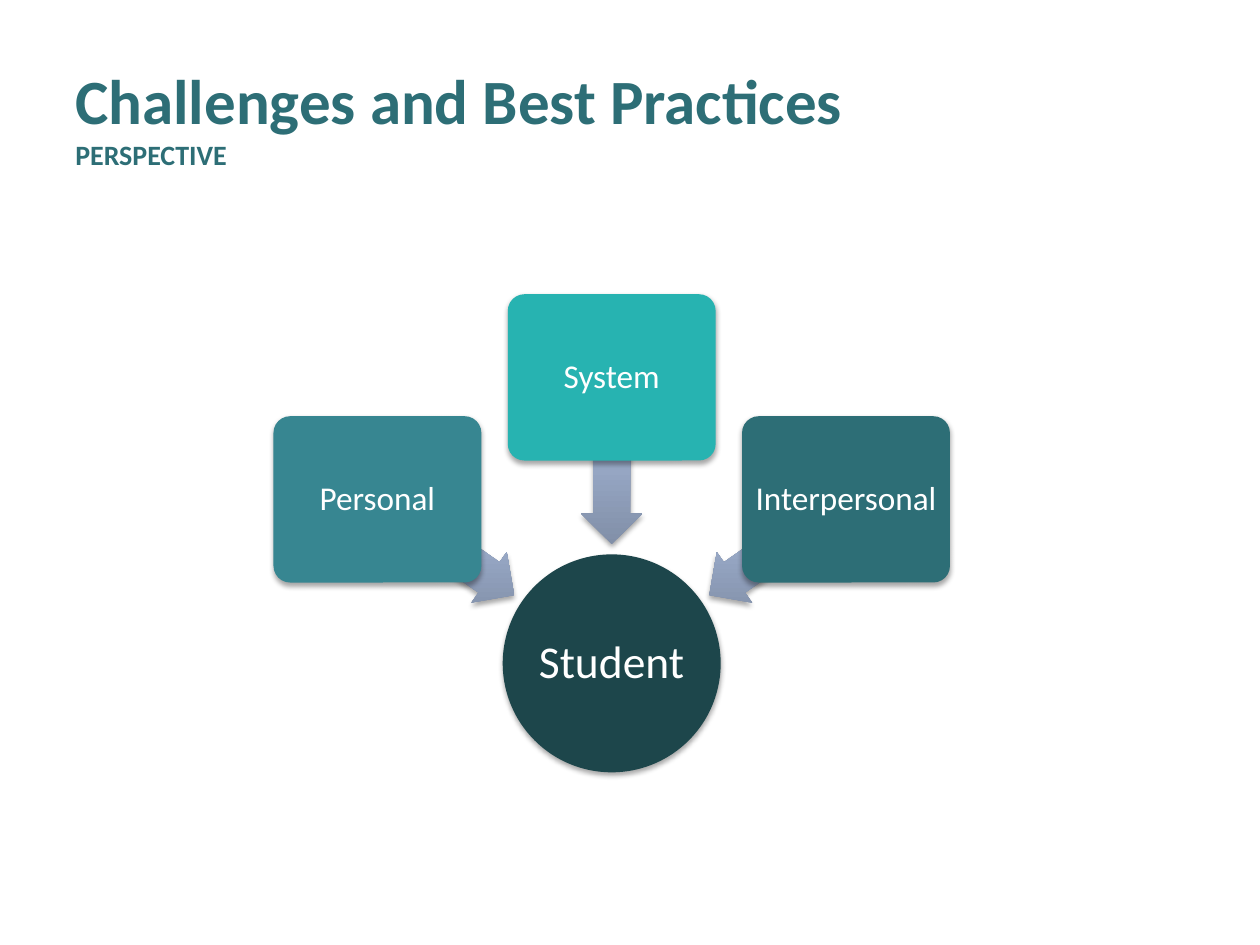
import math

import pptx
import pptx.util
import pptx.dml.color
import pptx.enum.shapes
import pptx.enum.text
import pptx.oxml
import pptx.oxml.ns

Inches = pptx.util.Inches
Pt = pptx.util.Pt
RGBColor = pptx.dml.color.RGBColor
MSO_SHAPE = pptx.enum.shapes.MSO_SHAPE
MSO_ANCHOR = pptx.enum.text.MSO_ANCHOR
qn = pptx.oxml.ns.qn

WHITE = RGBColor(0xFF, 0xFF, 0xFF)
DEEP_TEAL = RGBColor(0x1D, 0x46, 0x4B)
DARK_TEAL = RGBColor(0x2D, 0x6E, 0x76)
MID_TEAL = RGBColor(0x37, 0x86, 0x91)
BRIGHT_TEAL = RGBColor(0x27, 0xB3, 0xB1)
ARROW_DARK = RGBColor(0x81, 0x8F, 0xA8)
ARROW_LIGHT = RGBColor(0xA7, 0xB9, 0xDA)

FONT = "Calibri"
SHADOW = (
    f'<a:outerShdw {pptx.oxml.ns.nsdecls("a")} blurRad="{Pt(3.1)}" dist="{Pt(1.8)}" '
    'dir="5400000" rotWithShape="0"><a:srgbClr val="000000">'
    '<a:alpha val="35000"/></a:srgbClr></a:outerShdw>'
)

# Label, colour and direction from the hub (degrees, clockwise from right)
FACTORS = [
    ("Personal", MID_TEAL, 215),
    ("System", BRIGHT_TEAL, 270),
    ("Interpersonal", DARK_TEAL, 325),
]


def add_shape(s, kind, cx, cy, w, h):
    """Add a borderless shape with a soft shadow, centred on (cx, cy)."""
    sp = s.shapes.add_shape(kind, Inches(cx - w / 2), Inches(cy - h / 2), Inches(w), Inches(h))
    sp.line.fill.background()
    sp.shadow.inherit = False
    effects = sp._element.spPr.find(qn("a:effectLst"))
    effects.append(pptx.oxml.parse_xml(SHADOW))
    return sp


def add_label(sp, text, size, color, inset):
    sp.fill.solid()
    sp.fill.fore_color.rgb = color
    tf = sp.text_frame
    tf.word_wrap = True
    tf.vertical_anchor = MSO_ANCHOR.MIDDLE
    tf.margin_left = tf.margin_right = tf.margin_top = tf.margin_bottom = Inches(inset)
    p = tf.paragraphs[0]
    p.text = text
    p.alignment = pptx.enum.text.PP_ALIGN.CENTER
    p.line_spacing = 0.9
    p.font.name = FONT
    p.font.size = Pt(size)
    p.font.color.rgb = WHITE


def add_arrow(s, cx, cy, angle):
    sp = add_shape(s, MSO_SHAPE.LEFT_ARROW, cx, cy, 1.33, 0.49)
    sp.adjustments[0] = 0.6
    sp.adjustments[1] = 0.5
    sp.rotation = angle
    sp.fill.gradient()
    sp.fill.gradient_angle = 90
    for stop, color, position in zip(
        sp.fill.gradient_stops, (ARROW_DARK, ARROW_LIGHT), (0, 0.8)
    ):
        stop.color.rgb = color
        stop.position = position
    # Keep the shading vertical whatever the arrow's rotation
    sp._element.spPr.find(qn("a:gradFill")).set("rotWithShape", "0")


def add_title(s, x, y, w, h):
    tf = s.shapes.add_textbox(Inches(x), Inches(y), Inches(w), Inches(h)).text_frame
    tf.word_wrap = True
    tf.vertical_anchor = MSO_ANCHOR.MIDDLE
    p = tf.paragraphs[0]
    p.font.name = FONT
    p.font.bold = True
    p.font.color.rgb = DARK_TEAL
    r = p.add_run()
    r.text = "Challenges and Best Practices"
    r.font.size = Pt(36)
    p.add_line_break()
    r = p.add_run()
    r.text = "PERSPECTIVE"
    r.font.size = Pt(16)


def add_radial_diagram(s, x, y, w, h):
    hub_size, box_w, box_h = 1.73, 1.65, 1.32
    arrow_radius, box_radius = 1.61, 2.27
    hub_x, hub_y = x + w / 2, y + h - hub_size / 2

    # Hub
    hub = add_shape(s, MSO_SHAPE.OVAL, hub_x, hub_y, hub_size, hub_size)
    add_label(hub, "Student", 26, DEEP_TEAL, 0.02)

    # Factors, each with an arrow pointing at the hub
    for text, color, angle in FACTORS:
        dx, dy = math.cos(math.radians(angle)), math.sin(math.radians(angle))
        add_arrow(s, hub_x + arrow_radius * dx, hub_y + arrow_radius * dy, angle)
        box = add_shape(s, MSO_SHAPE.ROUNDED_RECTANGLE,
                        hub_x + box_radius * dx, hub_y + box_radius * dy, box_w, box_h)
        box.adjustments[0] = 0.1
        add_label(box, text, 19, color, 0.04)


def main():
    prs = pptx.Presentation()
    prs.slide_width, prs.slide_height = Inches(10), Inches(7.5)
    s = prs.slides.add_slide(prs.slide_layouts[6])
    add_title(s, 0.5, 0.3, 9, 1.25)
    add_radial_diagram(s, 2.17, 2.33, 5.37, 3.8)
    prs.save("out.pptx")


if __name__ == "__main__":
    main()
